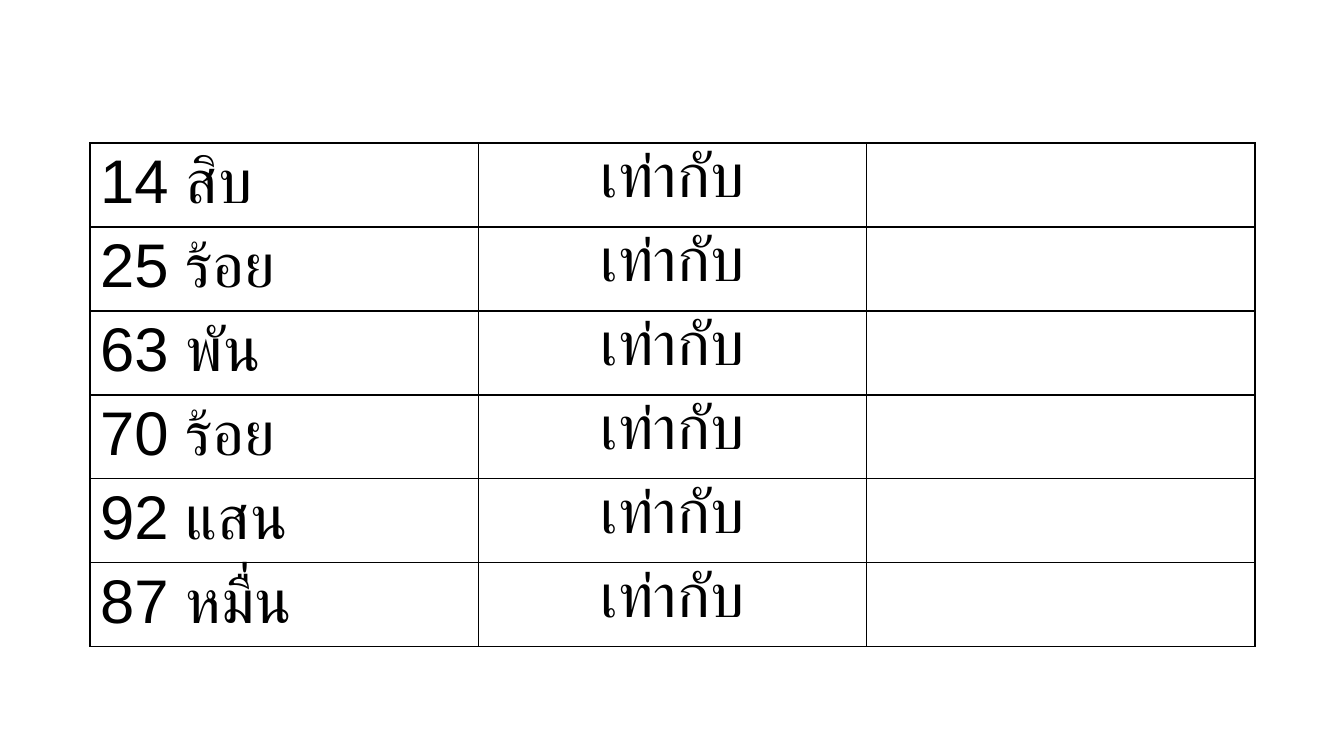
from lxml.etree import SubElement as Sub
from pptx import Presentation
from pptx.dml.color import RGBColor as Rgb
from pptx.enum.text import PP_ALIGN as Align
from pptx.oxml.ns import qn
from pptx.util import Pt

SUMS = ["14 สิบ", "25 ร้อย", "63 พัน", "70 ร้อย", "92 แสน", "87 หมื่น"]
EQUAL = "เท่ากับ"
COLS = 3
INK = {"text": "000000", "line": "000000"}
LEFT, TOP, WIDTH, ROW = 90, 143, 1165, 84


def px(n):
    return round(n * 914400 / 100.8)


def write(cell, text, size=44, font="Arial", color=INK["text"], align=Align.LEFT):
    para = cell.text_frame.paragraphs[0]
    para.alignment = align
    run = para.add_run()
    run.text = text
    run.font.size = Pt(size)
    run.font.name = font
    run.font.color.rgb = Rgb.from_string(color)


def border(cell):
    props = cell._tc.get_or_add_tcPr()
    for at, side in enumerate(("lnL", "lnR", "lnT", "lnB")):
        line = props.makeelement(qn(f"a:{side}"), {"w": str(Pt(1))})
        props.insert(at, line)
        fill = Sub(line, qn("a:solidFill"))
        Sub(fill, qn("a:srgbClr"), val=INK["line"])


def main():
    deck = Presentation()
    deck.slide_width, deck.slide_height = px(1344), px(756)
    slide = deck.slides.add_slide(deck.slide_layouts[6])
    frame = slide.shapes.add_table(
        len(SUMS), COLS, px(LEFT), px(TOP), px(WIDTH), px(ROW * len(SUMS)))
    table = frame.table
    table.first_row = table.horz_banding = False
    for row, label in zip(table.rows, SUMS):
        row.height = px(ROW)
        for cell in row.cells:
            cell.fill.background()
            border(cell)
        write(row.cells[0], label)
        write(row.cells[1], EQUAL, align=Align.CENTER)
    deck.save("out.pptx")


if __name__ == "__main__":
    main()
